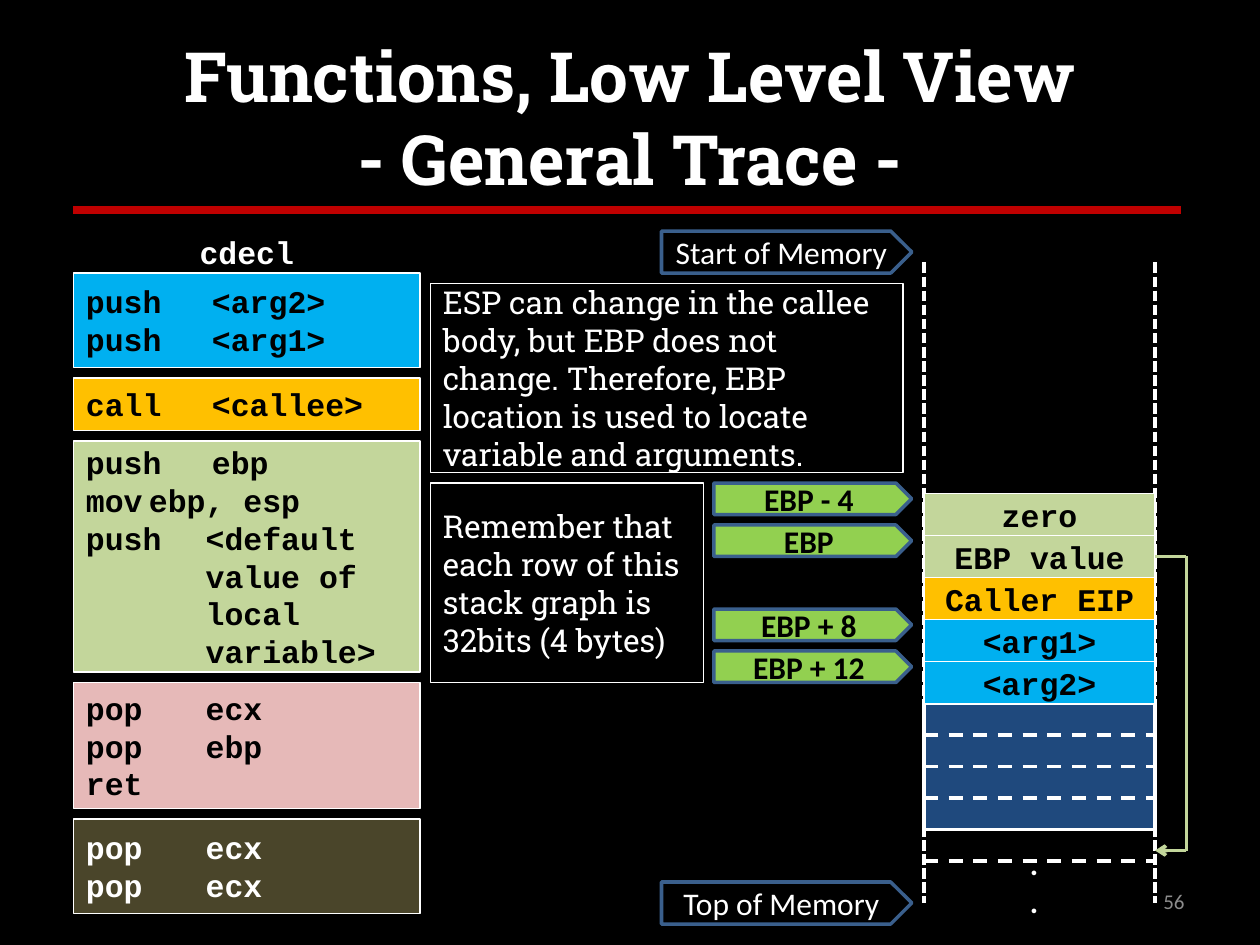
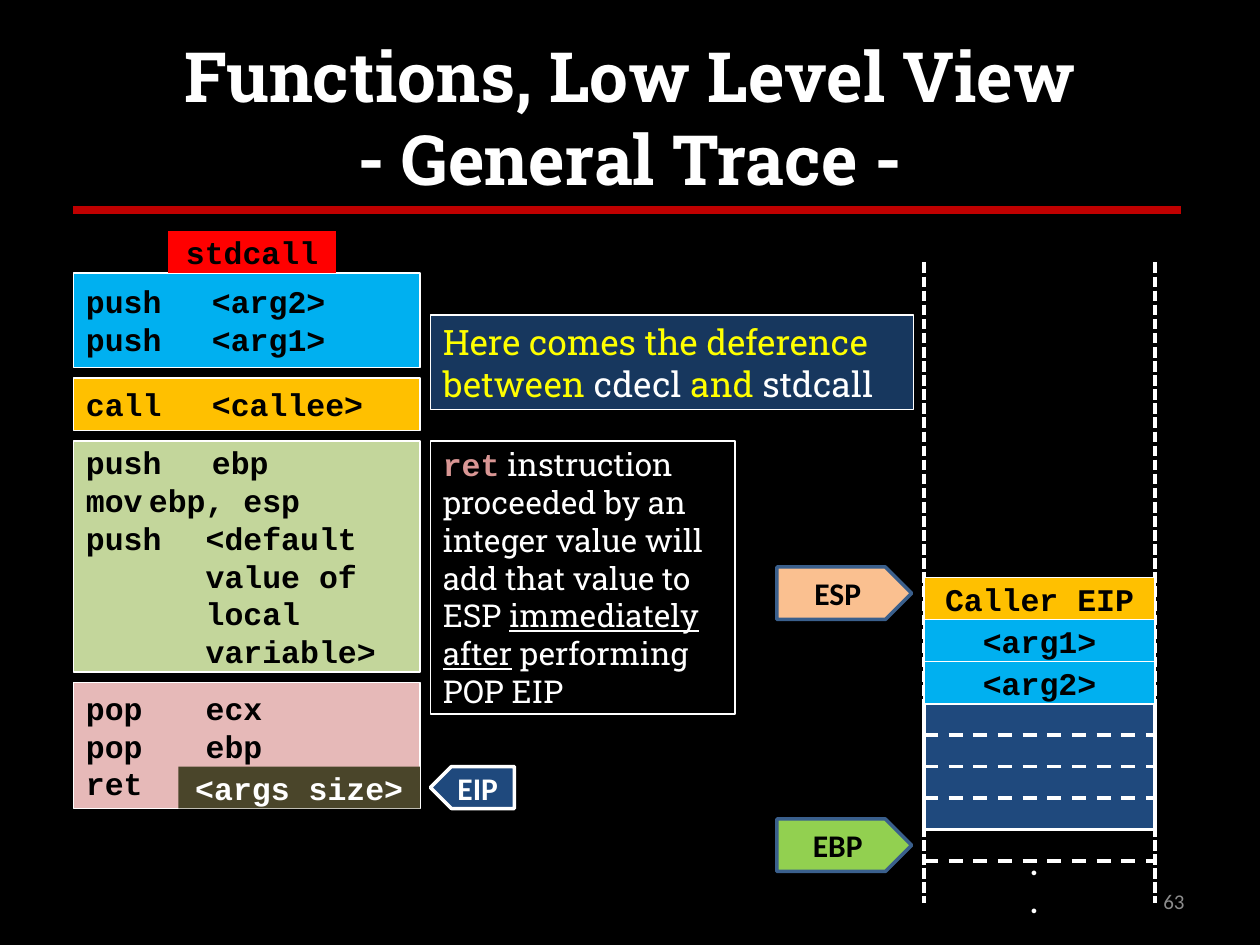
"""Build two slides that trace a function call beside its stack."""
from lxml.etree import SubElement
from pptx import Presentation
from pptx.dml.color import RGBColor
from pptx.enum.dml import MSO_LINE
from pptx.enum.shapes import MSO_CONNECTOR, MSO_SHAPE
from pptx.enum.text import MSO_ANCHOR, PP_ALIGN
from pptx.oxml.ns import qn
from pptx.util import Pt

MONO, SLAB, SANS = "Courier New", "Roboto Slab", "Calibri"
BLACK, WHITE, RED, YELLOW = "000000", "FFFFFF", "C00000", "FFFF00"
SKY, AMBER, LEAF, ROSE, OLIVE = "00B0F0", "FFC000", "C3D69B", "E6B9B8", "4A452A"
LIME, NAVY, PEACH, EDGE, GRAY = "92D050", "1F497D", "FAC090", "3A5F8C", "8C8C8C"
LEFT, CENTER, RIGHT = PP_ALIGN.LEFT, PP_ALIGN.CENTER, PP_ALIGN.RIGHT

TITLE = ("Functions, Low Level View", "- General Trace -")

CODE = [
    (54, SKY, BLACK, ["push\t<arg2>", "push\t<arg1>"], []),
    (30, AMBER, BLACK, ["call\t<callee>"], []),
    (132, LEAF, BLACK, ["push\tebp", "mov\tebp, esp"],
     ["push\t<default value of local variable>"]),
    (72, ROSE, BLACK, [], ["pop\tecx", "pop\tebp", "ret"]),
    (54, OLIVE, WHITE, [], ["pop\tecx", "pop\tecx"]),
]
STACK = [("<arg2>", SKY), ("<arg1>", SKY), ("Caller EIP", AMBER),
         ("EBP value", LEAF), ("zero", LEAF)]

MEMORY_TAGS = [("Start of Memory", 132), ("Top of Memory", 504)]
EBP_TAGS = [("EBP - 4", 276), ("EBP", 300), ("EBP + 8", 348), ("EBP + 12", 372)]
REGISTER_TAGS = [("ESP", 324, PEACH), ("EBP", 468, LIME)]

ESP_NOTE = ("ESP can change in the callee body, but EBP does not change. "
            "Therefore, EBP location is used to locate variable and arguments.")
ROW_NOTE = "Remember that each row of this stack graph is 32bits (4 bytes)"
DIFFERENCE_NOTE = [("Here comes the deference between ", {"color": YELLOW}), ("cdecl", {}),
                   (" and ", {"color": YELLOW}), ("stdcall", {})]
RET_NOTE = [("ret", {"font": MONO, "color": "D99694", "bold": True}),
            (" instruction proceeded by an integer value will add that value to ESP ", {}),
            ("immediately", {"underline": True}), (" ", {}),
            ("after", {"underline": True}), (" performing POP EIP", {})]

CODE_X, CODE_Y, CODE_W, GAP = 42, 156, 198, 6
NOTE_X = CODE_X + CODE_W + GAP
STACK_X, STACK_W, ROW_H, STACK_BASE = 528, 132, 24, 402
STACK_RIGHT = STACK_X + STACK_W
TAG_RIGHT = 521
HANG = 68.4


def rgb(value):
    return RGBColor.from_string(value)


def add_run(p, text, font, size, color, bold=False, underline=None):
    r = p.add_run()
    r.text = text
    r.font.name, r.font.size = font, Pt(size)
    r.font.bold, r.font.underline = bold, underline
    r.font.color.rgb = rgb(color)


def write(sp, paras, font=MONO, size=18, color=WHITE, bold=False, align=LEFT,
          wrap=True, hang_from=None):
    """Fill a shape; each paragraph is a string or a list of (text, style) runs."""
    tf = sp.text_frame
    tf.word_wrap, tf.vertical_anchor = wrap, MSO_ANCHOR.MIDDLE
    for i, runs in enumerate(paras):
        p = tf.paragraphs[0] if i == 0 else tf.add_paragraph()
        p.alignment, p.line_spacing = align, Pt(size * 1.2)
        if hang_from is not None and i >= hang_from:
            pPr = p._p.get_or_add_pPr()
            pPr.set("marL", str(Pt(HANG)))
            pPr.set("indent", str(-Pt(HANG)))
        for text, style in [(runs, {})] if isinstance(runs, str) else runs:
            base = {"font": font, "size": size, "color": color, "bold": bold}
            add_run(p, text, **(base | style))


def box(s, x, y, w, h, fill=None, line=WHITE, weight=1, kind=MSO_SHAPE.RECTANGLE):
    sp = s.shapes.add_shape(kind, Pt(x), Pt(y), Pt(w), Pt(h))
    sp.shadow.inherit = False
    if fill:
        sp.fill.solid()
        sp.fill.fore_color.rgb = rgb(fill)
    else:
        sp.fill.background()
    if line:
        sp.line.color.rgb, sp.line.width = rgb(line), Pt(weight)
    else:
        sp.line.fill.background()
    return sp


def label(s, x, y, w, h, paras, **style):
    sp = s.shapes.add_textbox(Pt(x), Pt(y), Pt(w), Pt(h))
    write(sp, paras, **style)
    return sp


def rule(s, x1, y1, x2, y2, color=WHITE, weight=2, dash=None, arrow=False):
    c = s.shapes.add_connector(MSO_CONNECTOR.STRAIGHT, Pt(x1), Pt(y1), Pt(x2), Pt(y2))
    c.line.color.rgb, c.line.width = rgb(color), Pt(weight)
    if dash:
        c.line.dash_style = dash
    if arrow:
        SubElement(c.line._get_or_add_ln(), qn("a:tailEnd"), type="arrow")
    SubElement(c._element.spPr, qn("a:effectLst"))


def tag(s, text, y, w, h, fill=None, bold=True):
    sp = box(s, TAG_RIGHT - w, y, w, h, fill, EDGE, 2, MSO_SHAPE.PENTAGON)
    write(sp, [text], SANS, color=BLACK if fill else WHITE, bold=bold,
          align=CENTER, wrap=False)


def note(s, y, w, h, runs, fill=None, size=18):
    write(box(s, NOTE_X, y, w, h, fill), [runs], SLAB, size)


def code_column(s, blocks):
    y = CODE_Y
    for h, fill, color, plain, hanging in blocks:
        sp = box(s, CODE_X, y, CODE_W, h, fill)
        write(sp, plain + hanging, color=color, bold=True, hang_from=len(plain))
        y += h + GAP


def stack(s, rows):
    for x in (STACK_X, STACK_RIGHT):
        rule(s, x, 150, x, 516, dash=MSO_LINE.SQUARE_DOT)
    box(s, STACK_X, STACK_BASE, STACK_W, 72, NAVY, weight=2)
    label(s, 522, 486, 138, 36, [".", "."], font=SANS, bold=True, align=CENTER)
    for step in (1, 2, 3, 5):
        y = STACK_BASE + 18 * step
        rule(s, STACK_X, y, STACK_RIGHT, y, dash=MSO_LINE.DASH)
    for i, (text, fill) in enumerate(rows, 1):
        sp = box(s, STACK_X, STACK_BASE - ROW_H * i, STACK_W, ROW_H, fill)
        write(sp, [text], color=BLACK, bold=True, align=CENTER)


def new_slide(prs, number, blocks, rows):
    s = prs.slides.add_slide(prs.slide_layouts[6])
    s.background.fill.solid()
    s.background.fill.fore_color.rgb = rgb(BLACK)
    title = {"font": SLAB, "size": 39.6, "bold": True}
    sp = label(s, 36, 21.6, 648, 90, [TITLE[0]], align=CENTER, **title)
    p = sp.text_frame.paragraphs[0]
    p.add_line_break()
    add_run(p, TITLE[1], color=WHITE, **title)
    rule(s, CODE_X, 120, 675, 120, RED, 5)
    code_column(s, blocks)
    stack(s, rows)
    label(s, 516, 500.4, 168, 28.8, [str(number)], font=SANS, size=12, color=GRAY, align=RIGHT)
    return s


def cdecl_slide(prs):
    s = new_slide(prs, 56, CODE, STACK)
    label(s, CODE_X, 132, CODE_W, 24, ["cdecl"], bold=True, align=CENTER)
    loop_x, top, bottom = 678, 318, 486
    rule(s, loop_x, top, STACK_RIGHT, top, LEAF)
    rule(s, loop_x, top, loop_x, bottom, LEAF)
    rule(s, loop_x, bottom, STACK_RIGHT, bottom, LEAF, arrow=True)
    for text, y in MEMORY_TAGS:
        tag(s, text, y, 143, 24, bold=False)
    for text, y in EBP_TAGS:
        tag(s, text, y, 113, 18, LIME)
    note(s, 162, 270, 108, ESP_NOTE)
    note(s, 276, 156, 114, ROW_NOTE)


def stdcall_slide(prs):
    s = new_slide(prs, 63, CODE[:-1], STACK[:3])
    write(box(s, 96, 132, 96, 24, "FF0000", None), ["stdcall"],
          color=BLACK, bold=True, align=CENTER)
    for text, y, fill in REGISTER_TAGS:
        tag(s, text, y, 77, 30, fill)
    eip = box(s, NOTE_X, 438, 48, 24, NAVY, weight=2, kind=MSO_SHAPE.PENTAGON)
    eip._element.spPr.xfrm.set("flipH", "1")
    write(eip, ["EIP"], SANS, bold=True, align=CENTER, wrap=False)
    note(s, 180, 276, 54, DIFFERENCE_NOTE, "17375E", 20)
    write(box(s, 102, 438, 138, 24, OLIVE, None), ["<args size>"], bold=True, align=CENTER)
    note(s, 252, 174, 156, RET_NOTE)


def main():
    prs = Presentation()
    prs.slide_width, prs.slide_height = Pt(720), Pt(540)
    cdecl_slide(prs)
    stdcall_slide(prs)
    prs.save("out.pptx")


if __name__ == "__main__":
    main()
